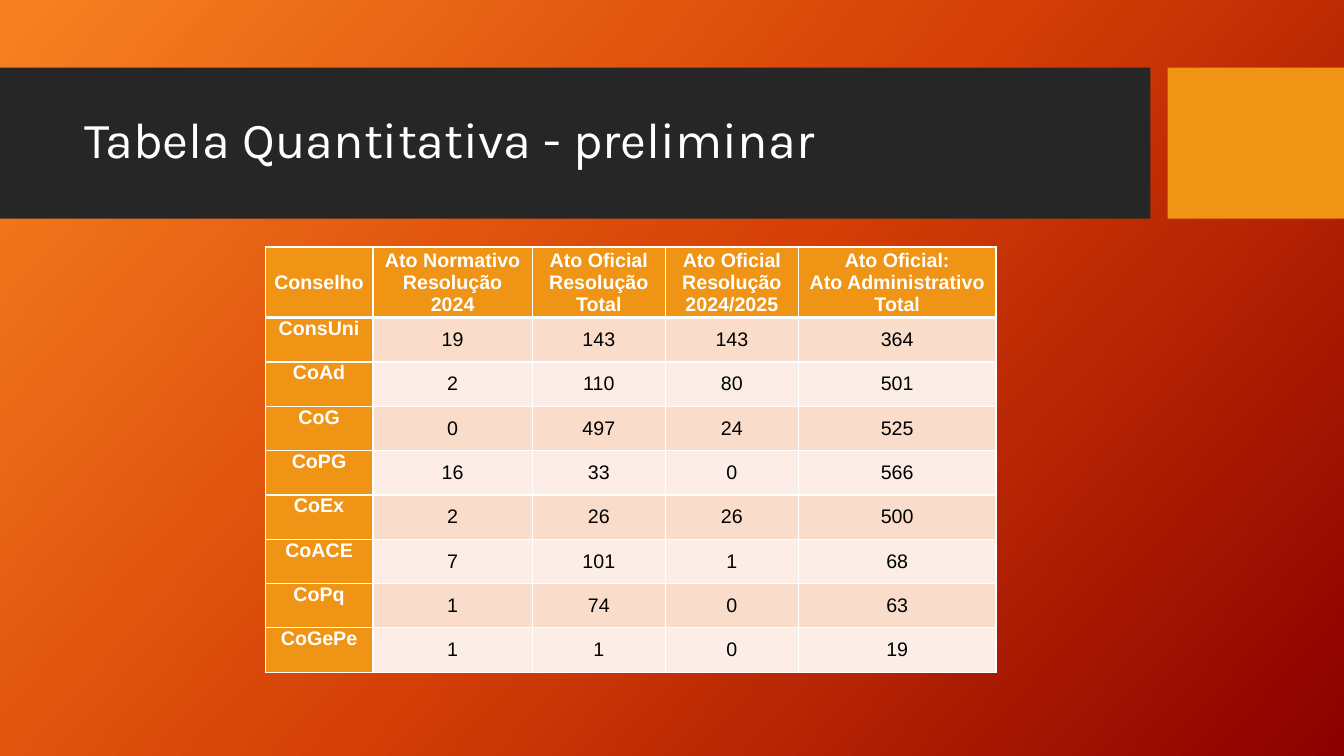
from copy import deepcopy

from lxml import etree
from pptx import Presentation
from pptx.dml.color import RGBColor
from pptx.enum.shapes import MSO_SHAPE
from pptx.enum.text import MSO_ANCHOR, PP_ALIGN
from pptx.oxml.ns import qn
from pptx.util import Inches, Pt

RECT = MSO_SHAPE.RECTANGLE
TOP, MIDDLE = MSO_ANCHOR.TOP, MSO_ANCHOR.MIDDLE
LEFT, CENTER = PP_ALIGN.LEFT, PP_ALIGN.CENTER

COLORS = {
    "grad_start": "F78121", "grad_mid": "D54006", "grad_end": "8C0000",
    "band": "262626", "accent": "F09415", "white": "FFFFFF", "black": "000000",
    "row_dark": "F9DCCA", "row_light": "FCEEE7",
}


def rgb(name):
    return RGBColor.from_string(COLORS[name])


def write(tf, text, size=14, font="Arial", color="white", bold=False,
          align=CENTER, spacing=None):
    for i, line in enumerate(text.split("\n")):
        p = tf.paragraphs[0] if i == 0 else tf.add_paragraph()
        p.alignment = align
        p.line_spacing = spacing
        r = p.add_run()
        r.text = line
        r.font.size = Pt(size)
        r.font.name = font
        r.font.bold = bold
        r.font.color.rgb = rgb(color)


prs = Presentation()
prs.slide_width, prs.slide_height = Inches(13.33), Inches(7.5)
s = prs.slides.add_slide(prs.slide_layouts[6])

fill = s.background.fill
fill.gradient()
fill.gradient_angle = 318
first_stop = s.element.find(".//" + qn("a:gs"))
first_stop.addnext(deepcopy(first_stop))
for stop, (pos, name) in zip(fill.gradient_stops, [(0, "grad_start"), (0.5, "grad_mid"), (1, "grad_end")]):
    stop.position = pos
    stop.color.rgb = rgb(name)

for x, w, name in [(0, 11.41, "band"), (11.58, 1.75, "accent")]:
    sp = s.shapes.add_shape(RECT, Inches(x), Inches(0.67), Inches(w), Inches(1.5))
    sp.shadow.inherit = False
    sp.fill.solid()
    sp.fill.fore_color.rgb = rgb(name)
    sp.line.fill.background()

title = s.shapes.add_textbox(Inches(0.74), Inches(0.82), Inches(10.51), Inches(1.18))
tf = title.text_frame
tf.word_wrap = True
tf.vertical_anchor = MIDDLE
write(tf, "Tabela Quantitativa - preliminar", size=36, font="Karla", align=LEFT, spacing=0.9)

rows = [
    ["Conselho", "Ato Normativo\nResolução\n2024", "Ato Oficial\nResolução\nTotal",
     "Ato Oficial\nResolução 2024/2025", "Ato Oficial:\nAto Administrativo\nTotal"],
    ["ConsUni", 19, 143, 143, 364],
    ["CoAd", 2, 110, 80, 501],
    ["CoG", 0, 497, 24, 525],
    ["CoPG", 16, 33, 0, 566],
    ["CoEx", 2, 26, 26, 500],
    ["CoACE", 7, 101, 1, 68],
    ["CoPq", 1, 74, 0, 63],
    ["CoGePe", 1, 1, 0, 19],
]
col_widths = [1.07, 1.58, 1.32, 1.32, 1.96]
row_heights = [0.66] + [0.44] * 8

table = s.shapes.add_table(len(rows), len(col_widths), Inches(2.63), Inches(2.45),
                           Inches(sum(col_widths)), Inches(sum(row_heights))).table
for col, w in zip(table.columns, col_widths):
    col.width = Inches(w)
for row, h in zip(table.rows, row_heights):
    row.height = Inches(h)

for i, values in enumerate(rows):
    for j, value in enumerate(values):
        cell = table.cell(i, j)
        heading = i == 0 or j == 0
        cell.margin_left = cell.margin_right = Inches(0.07)
        cell.margin_top = cell.margin_bottom = 0
        cell.vertical_anchor = TOP if j == 0 and i > 0 else MIDDLE
        write(cell.text_frame, str(value), color="white" if heading else "black", bold=heading)
        tcPr = cell._tc.get_or_add_tcPr()
        for side in ("lnL", "lnR", "lnT", "lnB"):
            thick = (i, side) in [(0, "lnB"), (1, "lnT")]
            ln = etree.SubElement(tcPr, qn(f"a:{side}"), w=str(Pt(3 if thick else 1)))
            solid = etree.SubElement(ln, qn("a:solidFill"))
            etree.SubElement(solid, qn("a:srgbClr"), val=COLORS["white"])
        cell.fill.solid()
        cell.fill.fore_color.rgb = rgb("accent" if heading else "row_dark" if i % 2 else "row_light")

prs.save("out.pptx")
